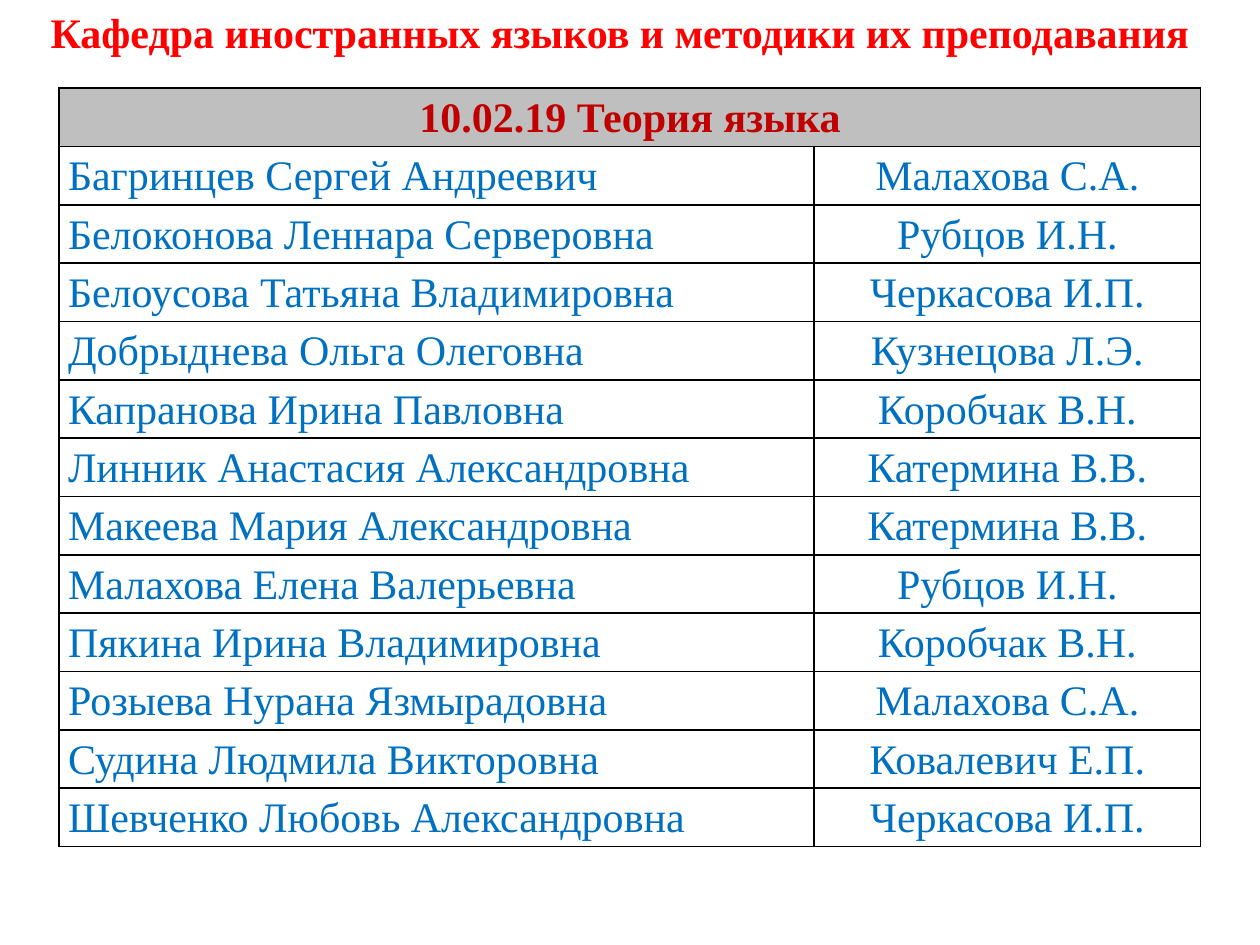
from lxml.etree import SubElement
from pptx import Presentation
from pptx.dml.color import RGBColor
from pptx.enum.text import MSO_ANCHOR, PP_ALIGN
from pptx.oxml.ns import qn
from pptx.util import Inches, Pt

TITLE = "Кафедра иностранных языков и методики их преподавания"
SPECIALTY = "10.02.19 Теория языка"
STUDENTS = [
    ("Багринцев Сергей Андреевич", "Малахова С.А."),
    ("Белоконова Леннара Серверовна", "Рубцов И.Н."),
    ("Белоусова Татьяна Владимировна", "Черкасова И.П."),
    ("Добрыднева Ольга Олеговна", "Кузнецова Л.Э."),
    ("Капранова Ирина Павловна", "Коробчак В.Н."),
    ("Линник Анастасия Александровна", "Катермина В.В."),
    ("Макеева Мария Александровна", "Катермина В.В."),
    ("Малахова Елена Валерьевна", "Рубцов И.Н."),
    ("Пякина Ирина Владимировна", "Коробчак В.Н."),
    ("Розыева Нурана Язмырадовна", "Малахова С.А."),
    ("Судина Людмила Викторовна", "Ковалевич Е.П."),
    ("Шевченко Любовь Александровна", "Черкасова И.П."),
]

RED = RGBColor(0xFF, 0x00, 0x00)
DARK_RED = RGBColor(0xC0, 0x00, 0x00)
BLUE = RGBColor(0x00, 0x70, 0xC0)
GREY = RGBColor(0xBF, 0xBF, 0xBF)
BLACK = RGBColor(0, 0, 0)

COL_WIDTHS = (5.99, 3.07)
TABLE_HEIGHT = 6.02
CELL_MARGINS = {"margin_left": Inches(0.07), "margin_right": Inches(0.07),
                "margin_top": 0, "margin_bottom": 0}


def write(tf, text, color, bold=False, align=PP_ALIGN.CENTER, spacing=None):
    p = tf.paragraphs[0]
    p.alignment, p.line_spacing = align, spacing
    r = p.add_run()
    r.text = text
    font = {"name": "Times New Roman", "size": Pt(24), "bold": bold}
    for name, value in font.items():
        setattr(r.font, name, value)
    r.font.color.rgb = color


def add_borders(cell):
    """Draw a thin black line on each side, placed before the cell's fill."""
    tcPr = cell._tc.get_or_add_tcPr()
    for i, side in enumerate(("lnL", "lnR", "lnT", "lnB")):
        ln = SubElement(tcPr, qn(f"a:{side}"), w=str(Pt(1)))
        fill = SubElement(ln, qn("a:solidFill"))
        SubElement(fill, qn("a:srgbClr"), val=str(BLACK))
        tcPr.insert(i, ln)


def fill_cell(cell, text, color, **kwargs):
    for name, value in CELL_MARGINS.items():
        setattr(cell, name, value)
    write(cell.text_frame, text, color, spacing=1.15, **kwargs)


prs = Presentation()
prs.slide_width, prs.slide_height = Inches(10), Inches(7.5)
s = prs.slides.add_slide(prs.slide_layouts[6])

tf = s.shapes.add_textbox(0, 0, Inches(9.84), Inches(0.5)).text_frame
tf.word_wrap = True
tf.vertical_anchor = MSO_ANCHOR.MIDDLE
write(tf, TITLE, RED, bold=True)

n_rows = len(STUDENTS) + 1
table = s.shapes.add_table(n_rows, 2, Inches(0.47), Inches(0.7),
                           Inches(sum(COL_WIDTHS)), Inches(TABLE_HEIGHT)).table
table.first_row = table.horz_banding = False
for col, width in zip(table.columns, COL_WIDTHS):
    col.width = Inches(width)
for cell in table.iter_cells():
    cell.fill.background()
    add_borders(cell)

header = table.cell(0, 0)
header.merge(table.cell(0, 1))
header.fill.solid()
header.fill.fore_color.rgb = GREY
fill_cell(header, SPECIALTY, DARK_RED, bold=True)

for row, (student, supervisor) in enumerate(STUDENTS, start=1):
    fill_cell(table.cell(row, 0), student, BLUE, align=PP_ALIGN.JUSTIFY)
    fill_cell(table.cell(row, 1), supervisor, BLUE)

prs.save("out.pptx")
